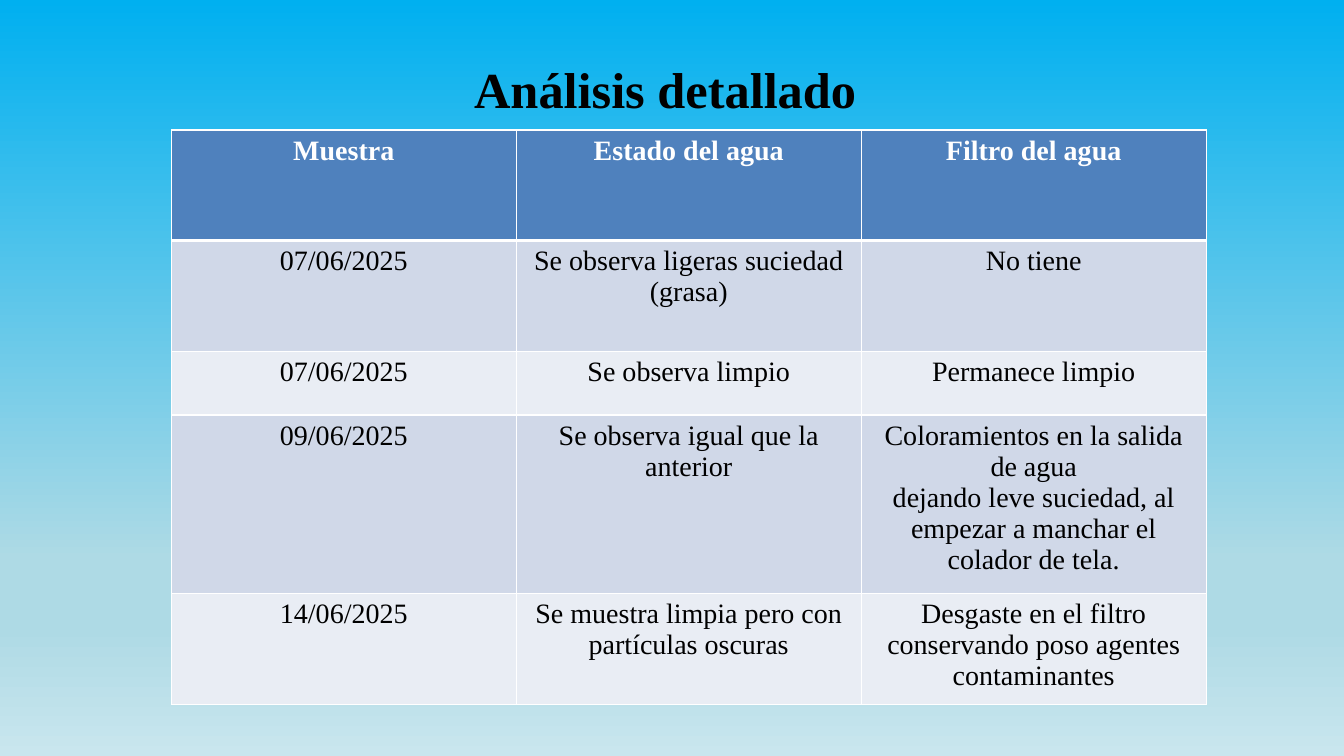
"""Builds the slide with the detailed analysis of the water samples."""
from typing import NamedTuple

from lxml import etree
from pptx import Presentation
from pptx import util as u
from pptx.dml.color import RGBColor
from pptx.enum import text
from pptx.oxml.ns import qn

SLIDE_WIDTH, SLIDE_HEIGHT = u.Inches(13.33), u.Inches(7.5)
FONT = "Times New Roman"
BLACK = RGBColor(0x00, 0x00, 0x00)
WHITE = RGBColor(0xFF, 0xFF, 0xFF)
HEADER_BLUE = RGBColor(0x4F, 0x81, 0xBD)
BAND_DARK = RGBColor(0xD0, 0xD8, 0xE8)
BAND_LIGHT = RGBColor(0xE9, 0xED, 0xF4)
WATER_STOPS = (
    (0, RGBColor(0x00, 0xB0, 0xF0)),
    (74, RGBColor(0xAE, 0xDA, 0xE5)),
    (83, RGBColor(0xAE, 0xDA, 0xE5)),
    (100, RGBColor(0xC9, 0xE6, 0xEE)),
)


class Area(NamedTuple):
    """Rectangle in shares of the slide's size."""
    left: float
    top: float
    width: float
    height: float

    def lengths(self) -> tuple[int, int, int, int]:
        return (int(self.left * SLIDE_WIDTH), int(self.top * SLIDE_HEIGHT),
                int(self.width * SLIDE_WIDTH), int(self.height * SLIDE_HEIGHT))


class Sample(NamedTuple):
    """Table row: its share of the slide's height and its three texts."""
    height: float
    date: str
    water: str
    filter: str


TITLE_AREA = Area(0.025, 0.061, 0.94, 0.111)
TABLE_AREA = Area(0.1275, 0.172, 0.77, 0.743)
SAMPLES = (
    Sample(0.146, "Muestra", "Estado del agua", "Filtro del agua"),
    Sample(0.147, "07/06/2025", "Se observa ligeras suciedad (grasa)", "No tiene"),
    Sample(0.084, "07/06/2025", "Se observa limpio", "Permanece limpio"),
    Sample(0.219, "09/06/2025", "Se observa igual que la anterior",
           "Coloramientos en la salida de agua\n"
           "dejando leve suciedad, al empezar a manchar el colador de tela."),
    Sample(0.147, "14/06/2025", "Se muestra limpia pero con partículas oscuras",
           "Desgaste en el filtro conservando poso agentes contaminantes"),
)


def write(frame, wording: str, size: int, color: RGBColor, bold: bool) -> None:
    frame.text = wording
    for paragraph in frame.paragraphs:
        paragraph.alignment = text.PP_ALIGN.CENTER
        for run in paragraph.runs:
            run.font.name, run.font.size = FONT, u.Pt(size)
            run.font.bold, run.font.color.rgb = bold, color


def add_solid(parent, color: RGBColor) -> None:
    fill = etree.SubElement(parent, qn("a:solidFill"))
    etree.SubElement(fill, qn("a:srgbClr"), val=str(color))


def paint_background(slide) -> None:
    fill = slide.background.fill
    fill.gradient()
    fill.gradient_angle = 270
    stops = next(slide.element.iter(qn("a:gsLst")))
    for stop in list(stops):
        stops.remove(stop)
    for percent, color in WATER_STOPS:
        stop = etree.SubElement(stops, qn("a:gs"), pos=str(percent * 1000))
        etree.SubElement(stop, qn("a:srgbClr"), val=str(color))


def add_borders(cell, top: int, bottom: int) -> None:
    properties = cell._tc.get_or_add_tcPr()
    widths = {"a:lnL": 1, "a:lnR": 1, "a:lnT": top, "a:lnB": bottom}
    for side, width in widths.items():
        line = etree.SubElement(properties, qn(side), w=str(u.Pt(width)))
        add_solid(line, WHITE)


def add_title(slide) -> None:
    title = slide.shapes.add_textbox(*TITLE_AREA.lengths()).text_frame
    title.word_wrap = True
    title.vertical_anchor = text.MSO_ANCHOR.MIDDLE
    write(title, "Análisis detallado", 36, BLACK, True)


def add_samples(slide) -> None:
    table = slide.shapes.add_table(len(SAMPLES), 3, *TABLE_AREA.lengths()).table
    for index, sample in enumerate(SAMPLES):
        table.rows[index].height = int(sample.height * SLIDE_HEIGHT)
        header = index == 0
        band = HEADER_BLUE if header else BAND_DARK if index % 2 else BAND_LIGHT
        for column, wording in enumerate(sample[1:]):
            cell = table.cell(index, column)
            add_borders(cell, 3 if index == 1 else 1, 3 if header else 1)
            cell.fill.solid()
            cell.fill.fore_color.rgb = band
            write(cell.text_frame, wording, 20, WHITE if header else BLACK, header)


def main() -> None:
    presentation = Presentation()
    presentation.slide_width, presentation.slide_height = SLIDE_WIDTH, SLIDE_HEIGHT
    slide = presentation.slides.add_slide(presentation.slide_layouts[6])
    paint_background(slide)
    add_title(slide)
    add_samples(slide)
    presentation.save("out.pptx")


if __name__ == "__main__":
    main()
